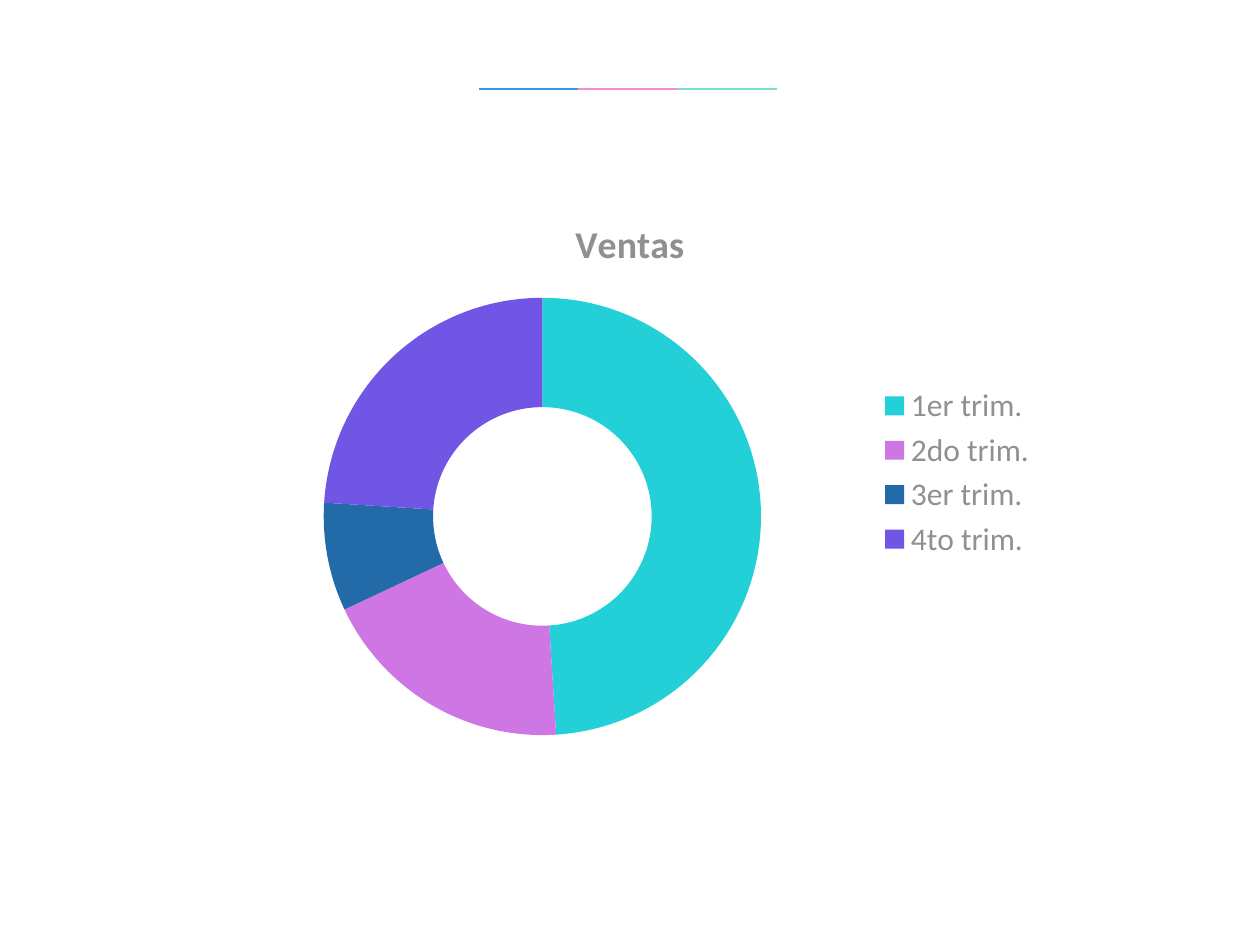
"""Build a slide with a quarterly sales doughnut under a three-colour rule."""
from dataclasses import dataclass

from lxml.etree import SubElement
from pptx import Presentation
from pptx.chart.data import CategoryChartData
from pptx.dml.color import RGBColor
from pptx.enum.chart import XL_CHART_TYPE as ChartType, XL_LEGEND_POSITION as LegendPosition
from pptx.enum.shapes import MSO_CONNECTOR as Connector
from pptx.oxml.ns import qn
from pptx.util import Pt


@dataclass(frozen=True)
class Theme:
    font: str = "Calibri"
    text: str = "909090"
    legend_size: float = 18
    title_size: float = 21.6
    rule_width: float = 1
    rule: tuple = ("2E9BED", "F090C6", "78DDCA")
    slices: tuple = ("23D0D8", "CF76E5", "226BA8", "7155E5")


THEME = Theme()
SALES = {"1er trim.": 49, "2do trim.": 19, "3er trim.": 8, "4to trim.": 24}


def format_font(font, size, bold=False):
    settings = {"name": THEME.font, "size": Pt(size), "bold": bold}
    for attribute, value in settings.items():
        setattr(font, attribute, value)
    font.color.rgb = RGBColor.from_string(THEME.text)


def add_rule(slide, left, top, segment):
    rule = slide.shapes.add_group_shape()
    for index, color in enumerate(THEME.rule):
        start = left + index * segment
        stroke = rule.shapes.add_connector(
            Connector.STRAIGHT, Pt(start), Pt(top), Pt(start + segment), Pt(top))
        stroke.line.color.rgb = RGBColor.from_string(color)
        stroke.line.width = Pt(THEME.rule_width)
        SubElement(stroke._element.spPr, qn("a:effectLst"))


def add_doughnut(slide, name, sales, left, top, width, height):
    sales_data = CategoryChartData()
    sales_data.categories = list(sales)
    sales_data.add_series(name, list(sales.values()))
    chart = slide.shapes.add_chart(
        ChartType.DOUGHNUT, Pt(left), Pt(top), Pt(width), Pt(height), sales_data).chart
    format_font(chart.font, THEME.legend_size)

    chart.has_title = True
    heading = chart.chart_title.text_frame
    heading.text = name
    format_font(heading.paragraphs[0].runs[0].font, THEME.title_size, bold=True)
    chart.chart_title.include_in_layout = False

    chart.has_legend = True
    legend_settings = {"position": LegendPosition.RIGHT, "include_in_layout": False}
    for attribute, value in legend_settings.items():
        setattr(chart.legend, attribute, value)
    format_font(chart.legend.font, THEME.legend_size)

    ring = chart.plots[0]
    ring.vary_by_categories = True
    for index, color in enumerate(THEME.slices):
        slice_format = ring.series[0].points[index].format
        slice_format.fill.solid()
        slice_format.fill.fore_color.rgb = RGBColor.from_string(color)
        slice_format.line.fill.background()


def main():
    deck = Presentation()
    deck.slide_width, deck.slide_height = Pt(720), Pt(540)
    slide = deck.slides.add_slide(deck.slide_layouts[6])
    add_rule(slide, left=273.6, top=51, segment=56.9)
    add_doughnut(slide, "Ventas", SALES, left=120, top=110, width=480, height=320)
    deck.save("out.pptx")


if __name__ == "__main__":
    main()
